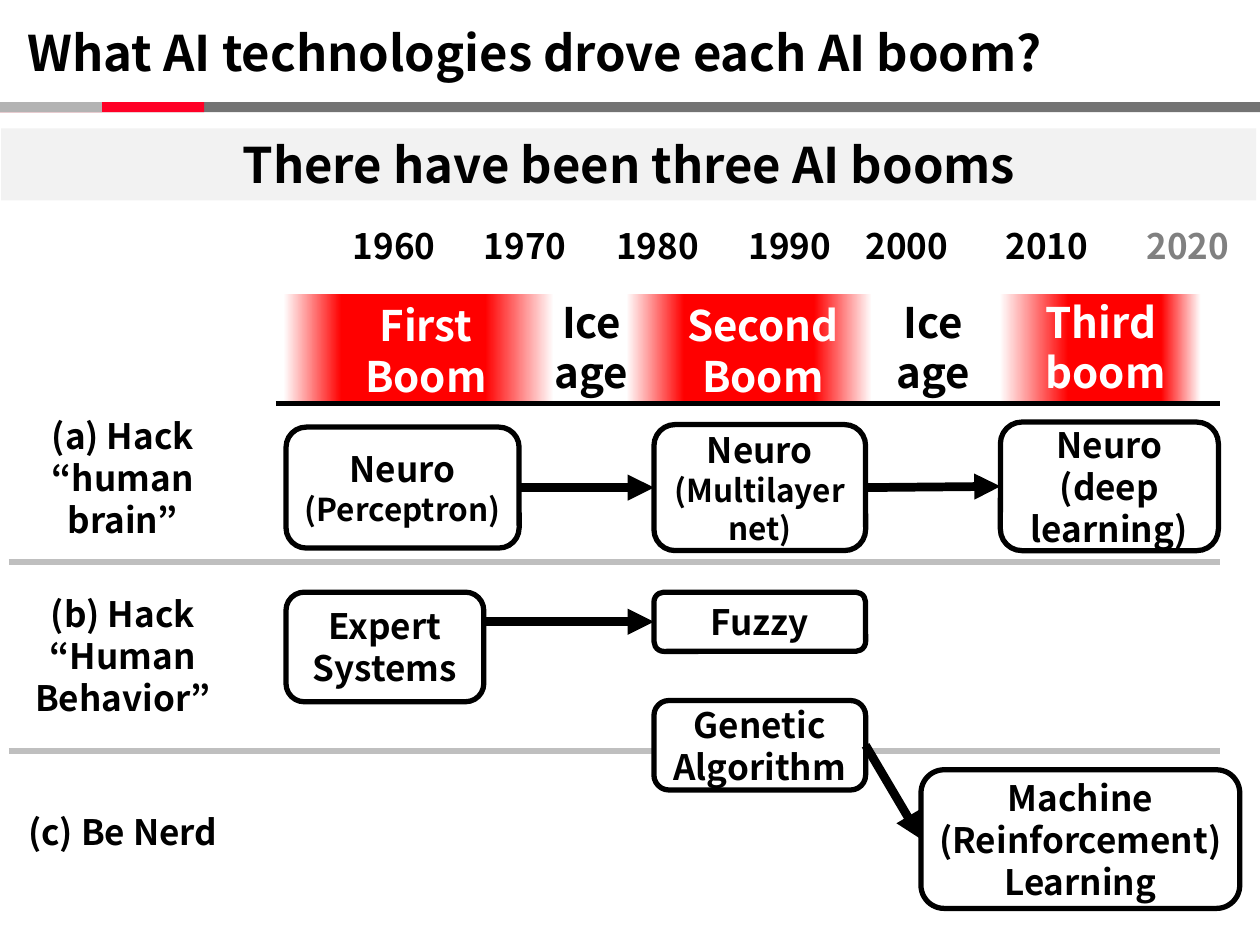
from pptx import Presentation
from pptx.dml.color import RGBColor
from pptx.enum.shapes import MSO_CONNECTOR, MSO_SHAPE
from pptx.enum.text import MSO_ANCHOR, PP_ALIGN
from pptx.oxml.ns import qn
from pptx.util import Inches, Pt
from lxml.etree import SubElement

FONT = "Noto Sans CJK JP"


def color(text):
    """Turn a hex string into a colour."""
    return RGBColor.from_string(text)


def write(shape, text, size=20, ink="000000", align=PP_ALIGN.CENTER,
          anchor=MSO_ANCHOR.TOP, pad=0, sizes=()):
    """Put formatted bold text into a shape, with optional sizes per line."""
    frame = shape.text_frame
    frame.text = text
    frame.word_wrap = True
    frame.vertical_anchor = anchor
    frame.margin_left = frame.margin_right = Inches(pad)
    frame.margin_top = frame.margin_bottom = Inches(pad / 2)
    for index, line in enumerate(frame.paragraphs):
        line.alignment = align
        for run in line.runs:
            run.font.name = FONT
            run.font.bold = True
            run.font.size = Pt(sizes[index] if sizes else size)
            run.font.color.rgb = color(ink)


def label(slide, box, text, **style):
    """Add a text box."""
    shape = slide.shapes.add_textbox(*map(Inches, box))
    write(shape, text, **style)


def block(slide, box, fill, kind=MSO_SHAPE.RECTANGLE):
    """Add a plain filled shape without an outline."""
    shape = slide.shapes.add_shape(kind, *map(Inches, box))
    shape.shadow.inherit = False
    shape.fill.solid()
    shape.fill.fore_color.rgb = color(fill)
    shape.line.fill.background()
    return shape


def rule(slide, start, end, ink, width):
    """Add a straight line."""
    line = slide.shapes.add_connector(
        MSO_CONNECTOR.STRAIGHT, *map(Inches, start + end))
    line.line.color.rgb = color(ink)
    line.line.width = Pt(width)
    SubElement(line._element.spPr, qn("a:effectLst"))
    return line


def header(slide, left, top, width):
    """Place the title, the coloured bar and the subtitle band."""
    title = slide.shapes.title
    title.left, title.top = Inches(left + 0.12), Inches(top + 0.13)
    title.width, title.height = Inches(9.23), Inches(0.57)
    write(title, "What AI technologies drove each AI boom?", size=28,
          align=PP_ALIGN.LEFT, anchor=MSO_ANCHOR.MIDDLE, pad=0.1)
    for span, fill in ((width, "737373"), (1.62, "FF0026"), (0.81, "B3B3B3")):
        block(slide, (left, top + 0.81, span, 0.08), fill)
    band = block(slide, (left + 0.01, top + 1.02, width - 0.04, 0.57), "F2F2F2")
    write(band, "There have been three AI booms", size=28,
          anchor=MSO_ANCHOR.MIDDLE, pad=0.1)


def fade(slide, box, stops):
    """Add a rectangle with a horizontal two-stop gradient."""
    shape = block(slide, box, "FF0000")
    shape.fill.gradient()
    shape.fill.gradient_angle = 0
    for stop, (place, ink) in zip(shape.fill.gradient_stops, stops):
        stop.position = place
        stop.color.rgb = color(ink)


def boom(slide, box, left, right, text, spot, align=PP_ALIGN.CENTER):
    """Place a boom period that fades out at both ends."""
    x, top, width, height = box
    fade(slide, (x, top, left, height), ((0.11, "FFFFFF"), (0.5, "FF0000")))
    fade(slide, (x + width - right, top, right, height),
         ((0.5, "FF0000"), (0.89, "FFFFFF")))
    label(slide, spot, text, size=24, ink="FFFFFF", align=align, pad=0.1)


def timeline(slide, left, top, width):
    """Place the years, booms, ice ages and the axis."""
    years = (2.8, 3.84, 4.89, 5.94, 6.87, 7.98, 9.1)
    for index, x in enumerate(years):
        year = 1960 + 10 * index
        label(slide, (x, top, 0.76, 0.34), str(year), align=PP_ALIGN.LEFT,
              ink="808080" if year == 2020 else "000000")
    y = top + 0.55
    boom(slide, (7.78, y, 1.84, 0.87), 1.4, 0.81, "Third boom",
         (8.2, y - 0.03, 1.32, 0.91), PP_ALIGN.LEFT)
    boom(slide, (4.84, y, 2.21, 0.87), 1.18, 1.18, "Second Boom",
         (5.27, y, 1.57, 0.91))
    boom(slide, (2.12, y, 2.43, 0.87), 1.18, 1.4, "First Boom",
         (2.72, y, 1.32, 0.91))
    for x in (4.32, 7.03):
        label(slide, (x, y + 0.02, 0.75, 0.81), "Ice\nage", size=24)
    rule(slide, (left, y + 0.87), (left + width, y + 0.87), "000000", 3)


def node(slide, box, text, **style):
    """Add a rounded box holding the name of a technology."""
    shape = block(slide, box, "FFFFFF", MSO_SHAPE.ROUNDED_RECTANGLE)
    shape.line.color.rgb = color("000000")
    shape.line.width = Pt(3)
    write(shape, text, anchor=MSO_ANCHOR.MIDDLE, **style)
    return shape


def arrow(slide, start, end, level=False):
    """Join the right side of one box to the left side of another."""
    line = rule(slide, (0, 0), (1, 1), "000000", 5)
    line.begin_connect(start, 3)
    line.end_connect(end, 1)
    if level:
        line.begin_y = line.end_y
    SubElement(line.line._get_or_add_ln(), qn("a:tailEnd"), type="triangle")


def lanes(slide, left, width):
    """Place the three approaches with their technologies and arrows."""
    for y in (4.46, 5.96):
        rule(slide, (left, y), (left + width, y), "BFBFBF", 3)
    names = ((3.29, 1.01, "(a) Hack “human brain”"),
             (4.7, 1.01, "(b) Hack\n“Human Behavior”"),
             (6.43, 0.34, "(c) Be Nerd"))
    for y, height, text in names:
        label(slide, (-0.01, y, 1.97, height), text)
    first = node(slide, (2.27, 3.39, 1.85, 0.96), "Neuro\n(Perceptron)",
                 sizes=(20, 18))
    multi = node(slide, (5.19, 3.37, 1.68, 1), "Neuro\n(Multilayer net)",
                 sizes=(20, 18))
    deep = node(slide, (7.94, 3.35, 1.73, 1.02), "Neuro\n(deep learning)")
    expert = node(slide, (2.27, 4.7, 1.57, 0.87), "Expert Systems")
    fuzzy = node(slide, (5.19, 4.7, 1.68, 0.47), "Fuzzy")
    gene = node(slide, (5.19, 5.56, 1.68, 0.71), "Genetic Algorithm")
    learn = node(slide, (7.31, 6.11, 2.53, 1.1),
                 "Machine (Reinforcement) Learning")
    for start, end in ((first, multi), (multi, deep), (gene, learn)):
        arrow(slide, start, end)
    arrow(slide, expert, fuzzy, level=True)


def main():
    """Build and save the slide."""
    deck = Presentation()
    deck.slide_width, deck.slide_height = Inches(10), Inches(7.5)
    slide = deck.slides.add_slide(deck.slide_layouts[5])
    header(slide, 0, 0, 10)
    timeline(slide, 2.19, 1.78, 7.49)
    lanes(slide, 0.07, 9.61)
    deck.save("out.pptx")


if __name__ == "__main__":
    main()
